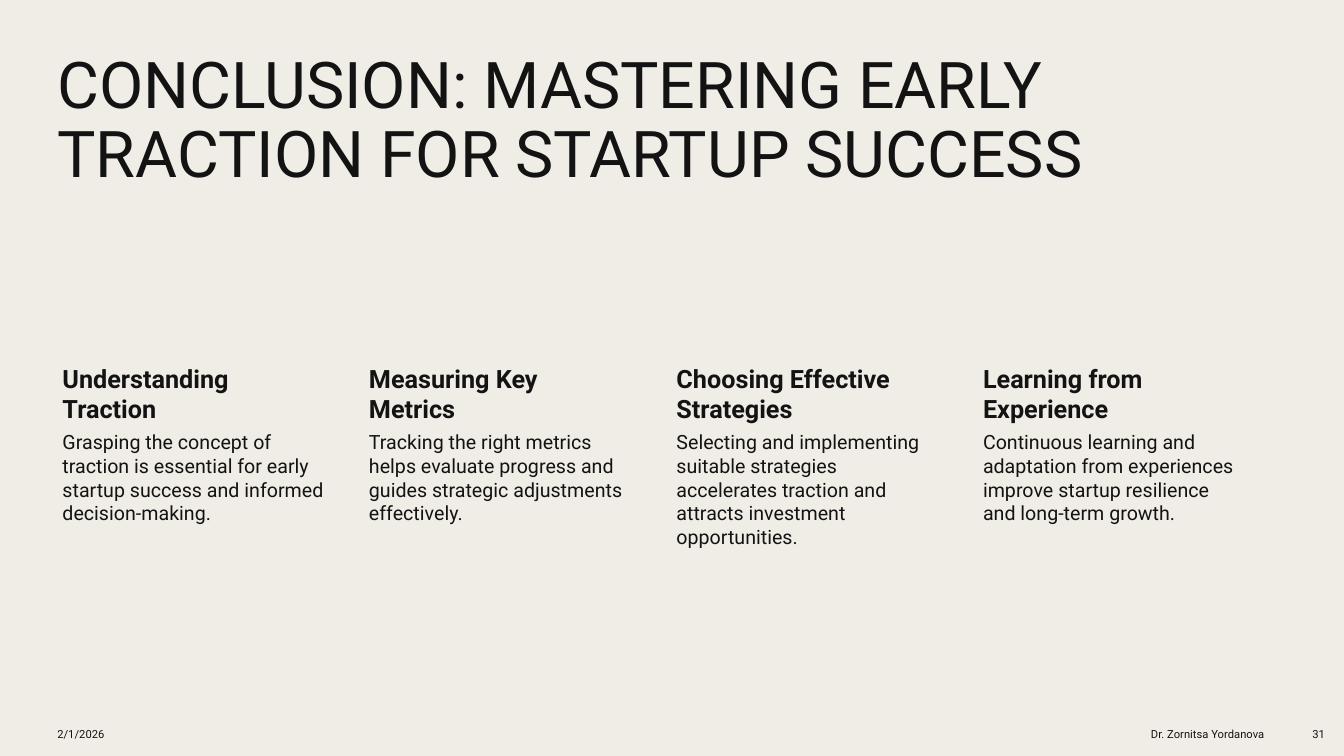
from pptx import Presentation
from pptx import util as u
from pptx.dml.color import RGBColor
from pptx.enum import text

PX = u.Inches(1) // 100
FONT = "Roboto"
INK = "131313"
PAPER = "F0EDE6"

TAKEAWAYS = [
    ("Understanding Traction",
     "Grasping the concept of traction is essential for early startup success "
     "and informed decision-making."),
    ("Measuring Key Metrics",
     "Tracking the right metrics helps evaluate progress and guides strategic "
     "adjustments effectively."),
    ("Choosing Effective Strategies",
     "Selecting and implementing suitable strategies accelerates traction and "
     "attracts investment opportunities."),
    ("Learning from Experience",
     "Continuous learning and adaptation from experiences improve startup "
     "resilience and long-term growth."),
]


def px(length):
    return u.Emu(length * PX)


def paint(color, value):
    color.rgb = RGBColor.from_string(value)


def write(frame, words, size, bold=False, align=text.PP_ALIGN.LEFT,
          anchor=text.MSO_ANCHOR.TOP, insets=(10, 5, 10, 5)):
    frame.word_wrap = True
    frame.auto_size = text.MSO_AUTO_SIZE.NONE
    frame.vertical_anchor = anchor
    (frame.margin_left, frame.margin_top,
     frame.margin_right, frame.margin_bottom) = map(px, insets)
    paragraph = frame.paragraphs[0]
    paragraph.text = words
    paragraph.alignment = align
    paragraph.font.name = FONT
    paragraph.font.size = u.Pt(size)
    paragraph.font.bold = bold
    paint(paragraph.font.color, INK)
    return paragraph


def add_text(slide, box, words, size, **style):
    label = slide.shapes.add_textbox(*map(px, box))
    return write(label.text_frame, words, size, **style)


def place_title(slide, box, words):
    title = slide.shapes.title
    title.left, title.top, title.width, title.height = map(px, box)
    write(title.text_frame, words, 46).line_spacing = 0.9


def add_takeaways(slide, box):
    left, top, width, height = box
    column_width, heading_height = 277, 68
    step = (width - column_width) / (len(TAKEAWAYS) - 1)
    for index, (heading, detail) in enumerate(TAKEAWAYS):
        x = left + round(index * step)
        add_text(slide, (x, top, column_width, heading_height), heading, 18,
                 bold=True, insets=(15, 3, 3, 3))
        add_text(slide, (x, top + heading_height, column_width,
                         height - heading_height), detail, 14,
                 insets=(15, 2, 2, 2))


def add_footer(slide, box):
    left, top, width, height = box
    number_width, presenter_width = 50, 291
    number_left = left + width - number_width
    presenter_left = number_left - 10 - presenter_width
    right = text.PP_ALIGN.RIGHT
    for x, part_width, words, align in (
            (left, 311, "2/1/2026", text.PP_ALIGN.LEFT),
            (presenter_left, presenter_width, "Dr. Zornitsa Yordanova", right),
            (number_left, number_width, "31", right)):
        paragraph = add_text(slide, (x, top, part_width, height), words, 8,
                             align=align, anchor=text.MSO_ANCHOR.MIDDLE)
        paragraph.space_after = u.Pt(6)


def main():
    deck = Presentation()
    deck.slide_width, deck.slide_height = px(1333), px(750)
    slide = deck.slides.add_slide(deck.slide_layouts[5])
    slide.background.fill.solid()
    paint(slide.background.fill.fore_color, PAPER)
    place_title(slide, (47, 47, 1191, 178),
                "CONCLUSION: MASTERING EARLY TRACTION FOR STARTUP SUCCESS")
    add_takeaways(slide, (47, 357, 1190, 308))
    add_footer(slide, (47, 710, 1277, 37))
    deck.save("out.pptx")


if __name__ == "__main__":
    main()
